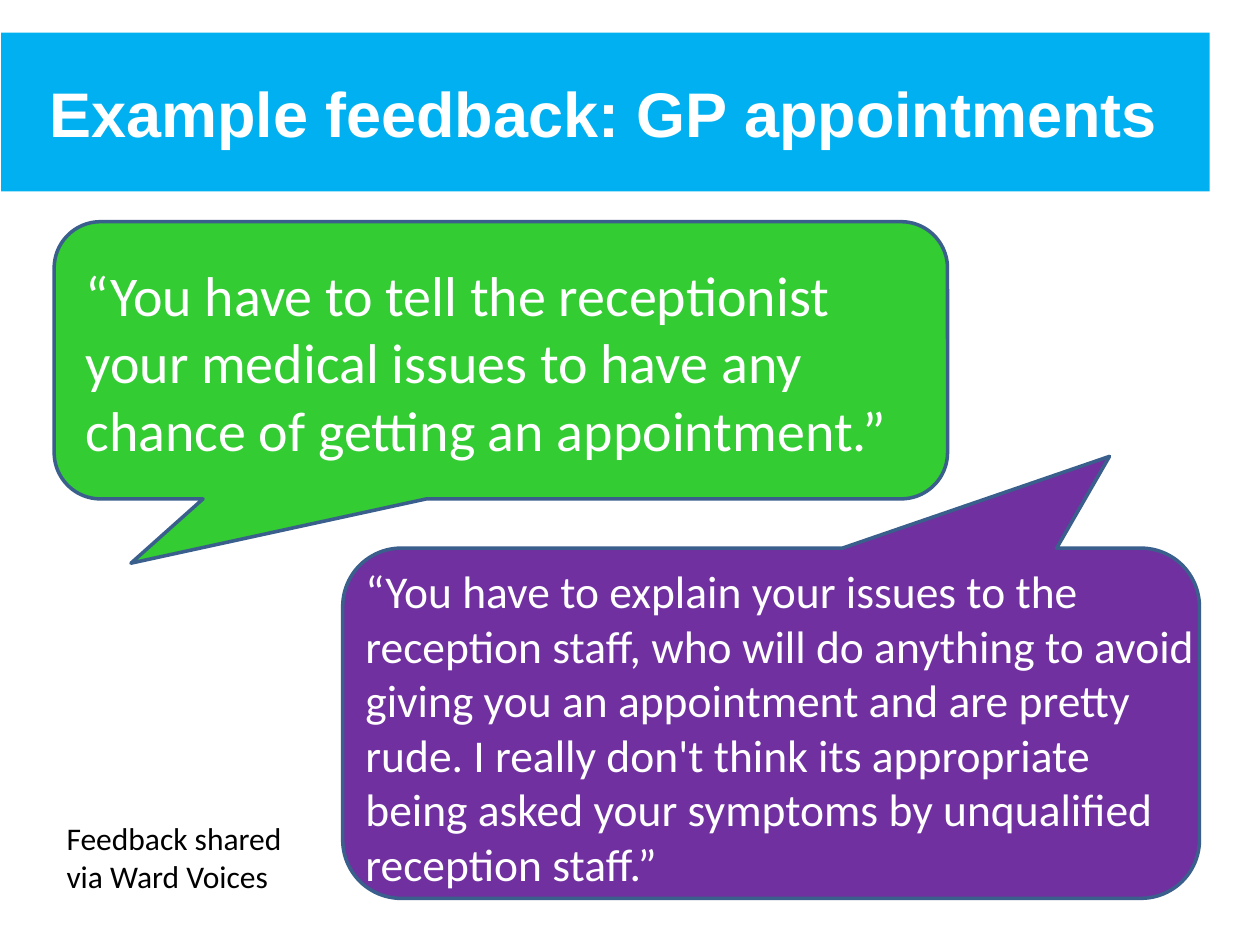
"""Build a slide of patient feedback on GP appointments."""
from lxml import etree
from pptx import Presentation
from pptx.dml.color import RGBColor
from pptx.enum.shapes import MSO_SHAPE
from pptx.enum.text import MSO_ANCHOR, MSO_AUTO_SIZE, PP_ALIGN
from pptx.oxml.ns import qn
from pptx.util import Inches, Pt

CALLOUT = MSO_SHAPE.ROUNDED_RECTANGULAR_CALLOUT
TOP, MIDDLE = MSO_ANCHOR.TOP, MSO_ANCHOR.MIDDLE
LEFT, NO_FIT = PP_ALIGN.LEFT, MSO_AUTO_SIZE.NONE
WHITE = RGBColor(0xFF, 0xFF, 0xFF)
BLACK = RGBColor(0, 0, 0)
BLUE = RGBColor(0x00, 0xB0, 0xF0)
GREEN = RGBColor(0x33, 0xCC, 0x33)
PURPLE = RGBColor(0x70, 0x30, 0xA0)
EDGE = RGBColor(0x3A, 0x5F, 0x8C)

TITLE = "Example feedback: GP appointments"
STAFF = (
    "“You have to explain your issues to the reception staff, who will do "
    "anything to avoid giving you an appointment and are pretty rude. "
    "I really don't think its appropriate being asked your symptoms by "
    "unqualified reception staff.”"
)
ISSUES = (
    "“You have to tell the receptionist your medical issues to have any "
    "chance of getting an appointment.”"
)
CREDIT = "Feedback shared via Ward Voices"

BUBBLES = [
    ((2.72, 4.35, 6.8, 2.78), (0.395, -0.762, 0.167), PURPLE),
    ((0.43, 1.76, 7.09, 2.2), (-0.414, 0.732, 0.167), GREEN),
]
NOTES = [
    (ISSUES, (0.58, 2.02, 6.62, 2.26), 32, WHITE),
    (CREDIT, (0.43, 6.45, 2.05, 0.71), 18, BLACK),
]


def place(shape, box):
    shape.left, shape.top, shape.width, shape.height = map(Inches, box)


def write(shape, text, size, color, face="Calibri", bold=False, anchor=TOP):
    frame = shape.text_frame
    frame.text = text
    frame.word_wrap = True
    frame.auto_size = NO_FIT
    frame.vertical_anchor = anchor
    para = frame.paragraphs[0]
    para.alignment = LEFT
    para.space_before = Pt(0)
    font = para.runs[0].font
    font.name, font.size, font.bold = face, Pt(size), bold
    font.color.rgb = color


def add_bubble(slide, box, tail, color):
    shape = slide.shapes.add_shape(CALLOUT, *map(Inches, box))
    for i, value in enumerate(tail):
        shape.adjustments[i] = value
    shape.shadow.inherit = False
    shape.fill.solid()
    shape.fill.fore_color.rgb = color
    shape.line.color.rgb = EDGE
    shape.line.width = Pt(2)
    return shape


def main():
    deck = Presentation()
    deck.slide_width, deck.slide_height = Inches(10), Inches(7.5)
    slide = deck.slides.add_slide(deck.slide_layouts[1])
    title, body = slide.placeholders

    place(title, (0.01, 0.26, 9.59, 1.26))
    title.fill.solid()
    title.fill.fore_color.rgb = BLUE
    write(title, TITLE, 36, WHITE, "Arial", True, MIDDLE)
    title.text_frame.margin_left = Inches(0.38)

    place(body, (2.8, 4.42, 6.8, 2.8))
    write(body, STAFF, 26, WHITE)
    props = body.text_frame.paragraphs[0]._p.get_or_add_pPr()
    props.set("marL", "0")
    props.set("indent", "0")
    etree.SubElement(props, qn("a:buNone"))

    for box, tail, color in BUBBLES:
        bubble = add_bubble(slide, box, tail, color)
        body._element.addprevious(bubble._element)

    for text, box, size, color in NOTES:
        note = slide.shapes.add_textbox(*map(Inches, box))
        write(note, text, size, color)

    deck.save("out.pptx")


if __name__ == "__main__":
    main()
